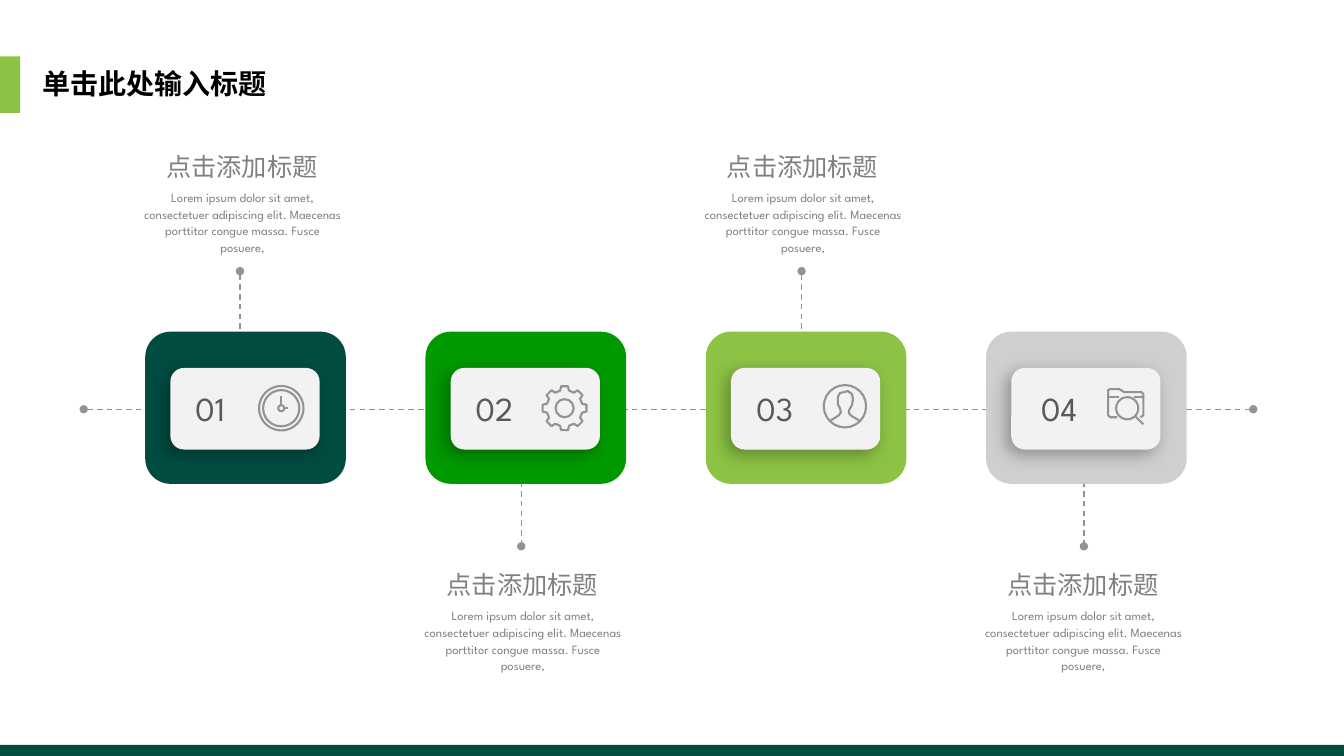
"""Build a four-step timeline slide with alternating callouts."""
from dataclasses import dataclass
from math import cos, radians, sin

from lxml import etree
from pptx import Presentation
from pptx.dml.color import RGBColor
from pptx.enum.dml import MSO_LINE
from pptx.enum.shapes import MSO_CONNECTOR, MSO_SHAPE
from pptx.enum.text import MSO_ANCHOR, PP_ALIGN
from pptx.oxml import parse_xml
from pptx.oxml.ns import nsdecls, qn
from pptx.util import Inches, Pt

STRAIGHT = MSO_CONNECTOR.STRAIGHT
DASH = MSO_LINE.DASH
RECTANGLE, ROUNDED, OVAL = MSO_SHAPE.RECTANGLE, MSO_SHAPE.ROUNDED_RECTANGLE, MSO_SHAPE.OVAL
LEFT, CENTER = PP_ALIGN.LEFT, PP_ALIGN.CENTER
TOP, MIDDLE = MSO_ANCHOR.TOP, MSO_ANCHOR.MIDDLE

COLORS = {
    "forest": "004C41", "green": "009900", "lime": "8CC345", "silver": "D0CECE",
    "card": "F2F2F2", "line": "929397", "number": "595959", "text": "808080", "title": "000000",
}
LATIN_FONT, CHINESE_FONT = "League Spartan", "Noto Sans CJK SC"
HEADING = "点击添加标题"
BODY = ("Lorem ipsum dolor sit amet, consectetuer adipiscing elit. "
        "Maecenas porttitor congue massa. Fusce posuere,")
PITCH = 2.78
AXIS_Y = 4.06
Point = tuple[float, float]


@dataclass
class Icon:
    """Rings (centre x, centre y, radius) and strokes that form an icon."""
    rings: list[tuple[float, float, float]]
    strokes: list[list[Point]]


@dataclass
class Step:
    """One stage of the timeline."""
    number: str
    color: str
    number_left: float
    stem_x: float
    above: bool
    icon: Icon


def gear_outline(x: float, y: float) -> list[Point]:
    """Return the closed outline of an eight-toothed gear."""
    profile = [(-14, 0.18), (-9, 0.22), (9, 0.22), (14, 0.18)]
    points = [(x + radius * cos(radians(45 * tooth + turn)), y + radius * sin(radians(45 * tooth + turn)))
              for tooth in range(8) for turn, radius in profile]
    return points + points[:1]


CLOCK = Icon([(2.79, 4.05, 0.22), (2.79, 4.05, 0.18), (2.79, 4.05, 0.03)],
             [[(2.79, 4.02), (2.79, 3.93)], [(2.82, 4.05), (2.86, 4.05)]])
GEAR = Icon([(5.6, 4.05, 0.09)], [gear_outline(5.6, 4.05)])
PERSON = Icon([(8.38, 4.03, 0.21)], [[
    (8.24, 4.17), (8.32, 4.12), (8.34, 4.09), (8.33, 4.05), (8.31, 4.01), (8.31, 3.94),
    (8.33, 3.9), (8.37, 3.89), (8.41, 3.88), (8.45, 3.91), (8.46, 3.96), (8.45, 4.02),
    (8.42, 4.07), (8.42, 4.1), (8.45, 4.13), (8.52, 4.17)]])
FOLDER = Icon([(11.18, 4.05, 0.11)], [
    [(11.08, 4.14), (11.01, 4.14), (10.99, 4.12), (10.99, 3.87), (11.01, 3.86), (11.1, 3.86),
     (11.15, 3.89), (11.32, 3.89), (11.34, 3.91), (11.34, 4.12), (11.31, 4.14)],
    [(10.99, 3.94), (11.1, 3.94)], [(11.25, 3.94), (11.34, 3.94)], [(11.26, 4.13), (11.34, 4.21)]])
STEPS = [
    Step("01", "forest", 1.6, 2.38, True, CLOCK),
    Step("02", "green", 4.42, 5.17, False, GEAR),
    Step("03", "lime", 7.2, 7.95, True, PERSON),
    Step("04", "silver", 10.02, 10.75, False, FOLDER),
]


def rgb(name: str) -> RGBColor:
    """Look up a named colour."""
    return RGBColor.from_string(COLORS[name])


def add_block(page, kind, left: float, top: float, width: float, height: float, color: str):
    """Add a filled shape without outline."""
    block = page.shapes.add_shape(kind, Inches(left), Inches(top), Inches(width), Inches(height))
    block.shadow.inherit = False
    block.fill.solid()
    block.fill.fore_color.rgb = rgb(color)
    block.line.fill.background()
    return block


def add_line(page, start: Point, end: Point, width: float = 1.5):
    """Add a grey straight line."""
    line = page.shapes.add_connector(STRAIGHT, *map(Inches, start + end))
    line.line.width = Pt(width)
    line.line.color.rgb = rgb("line")
    etree.SubElement(line._element.spPr, qn("a:effectLst"))
    return line


def add_dashed_line(page, start: Point, end: Point) -> None:
    """Add a dashed line with a dot at both ends."""
    line = add_line(page, start, end, 1)
    line.line.dash_style = DASH
    outline = line._element.spPr.find(qn("a:ln"))
    for tag in ("a:headEnd", "a:tailEnd"):
        etree.SubElement(outline, qn(tag), type="oval")


def add_card_shadow(card) -> None:
    """Cast a soft shadow to the lower left."""
    effects = card._element.spPr.find(qn("a:effectLst"))
    effects.append(parse_xml(
        f'<a:outerShdw {nsdecls("a")} blurRad="{Pt(12)}" dist="{Pt(5)}" dir="8100000" '
        'algn="tr" rotWithShape="0"><a:srgbClr val="000000"><a:alpha val="30000"/>'
        '</a:srgbClr></a:outerShdw>'))


def write_text(box, text: str, size: float, font: str, color: str, align=CENTER,
               anchor=TOP, bold: bool = False, spacing: float = 1.0) -> None:
    """Fill a box with one formatted paragraph."""
    frame = box.text_frame
    frame.word_wrap = True
    frame.vertical_anchor = anchor
    frame.text = text
    para = frame.paragraphs[0]
    para.alignment = align
    para.line_spacing = spacing
    span = para.runs[0]
    span.font.size = Pt(size)
    span.font.bold = bold
    span.font.color.rgb = rgb(color)
    span.font.name = font
    etree.SubElement(span._r.get_or_add_rPr(), qn("a:ea"), typeface=font)


def add_text(page, left: float, top: float, width: float, height: float, text: str,
             size: float, font: str, color: str, spacing: float = 1.0) -> None:
    """Add a centred text box."""
    box = page.shapes.add_textbox(Inches(left), Inches(top), Inches(width), Inches(height))
    write_text(box, text, size, font, color, spacing=spacing)


def add_icon(page, icon: Icon) -> None:
    """Draw an icon as grey outlines."""
    outlines = []
    for x, y, radius in icon.rings:
        outlines.append(page.shapes.add_shape(
            OVAL, Inches(x - radius), Inches(y - radius), Inches(2 * radius), Inches(2 * radius)))
    for stroke in icon.strokes:
        if len(stroke) == 2:
            add_line(page, *stroke)
            continue
        points = [(Inches(x), Inches(y)) for x, y in stroke]
        builder = page.shapes.build_freeform(*points[0])
        builder.add_line_segments(points[1:], close=points[0] == points[-1])
        outlines.append(builder.convert_to_shape())
    for outline in outlines:
        outline.shadow.inherit = False
        outline.fill.background()
        outline.line.color.rgb = rgb("line")
        outline.line.width = Pt(1.5)


def add_step(page, index: int, step: Step) -> None:
    """Draw the card, number, icon and callout of one step."""
    shift = index * PITCH
    add_block(page, ROUNDED, 1.44 + shift, 3.29, 1.99, 1.51, step.color)
    card = add_block(page, ROUNDED, 1.69 + shift, 3.65, 1.48, 0.81, "card")
    add_card_shadow(card)
    add_text(page, step.number_left, 3.8, 0.97, 0.5, step.number, 24, LATIN_FONT, "number")
    add_icon(page, step.icon)
    top = 1.45 if step.above else 5.6
    add_text(page, 1.35 + shift, top, 2.1, 0.4, HEADING, 18, CHINESE_FONT, "text")
    add_text(page, 1.31 + shift, top + 0.37, 2.19, 0.75, BODY, 9, LATIN_FONT, "text", 1.1)


def main() -> None:
    """Create and save the deck."""
    deck = Presentation()
    deck.slide_width, deck.slide_height = Inches(13.33), Inches(7.5)
    page = deck.slides.add_slide(deck.slide_layouts[5])
    for step in STEPS:
        top = 2.69 if step.above else 4.74
        add_dashed_line(page, (step.stem_x, top), (step.stem_x, top + 0.68))
    add_dashed_line(page, (0.83, AXIS_Y), (12.43, AXIS_Y))
    for index, step in enumerate(STEPS):
        add_step(page, index, step)
    add_block(page, RECTANGLE, 0, 7.39, 13.33, 0.11, "forest")
    add_block(page, RECTANGLE, 0, 0.56, 0.2, 0.56, "lime")
    title = page.shapes.title
    title.left, title.top, title.width, title.height = map(Inches, (0.32, 0.61, 2.93, 0.44))
    write_text(title, "单击此处输入标题", 20, CHINESE_FONT, "title", LEFT, MIDDLE, True)
    deck.save("out.pptx")


if __name__ == "__main__":
    main()
